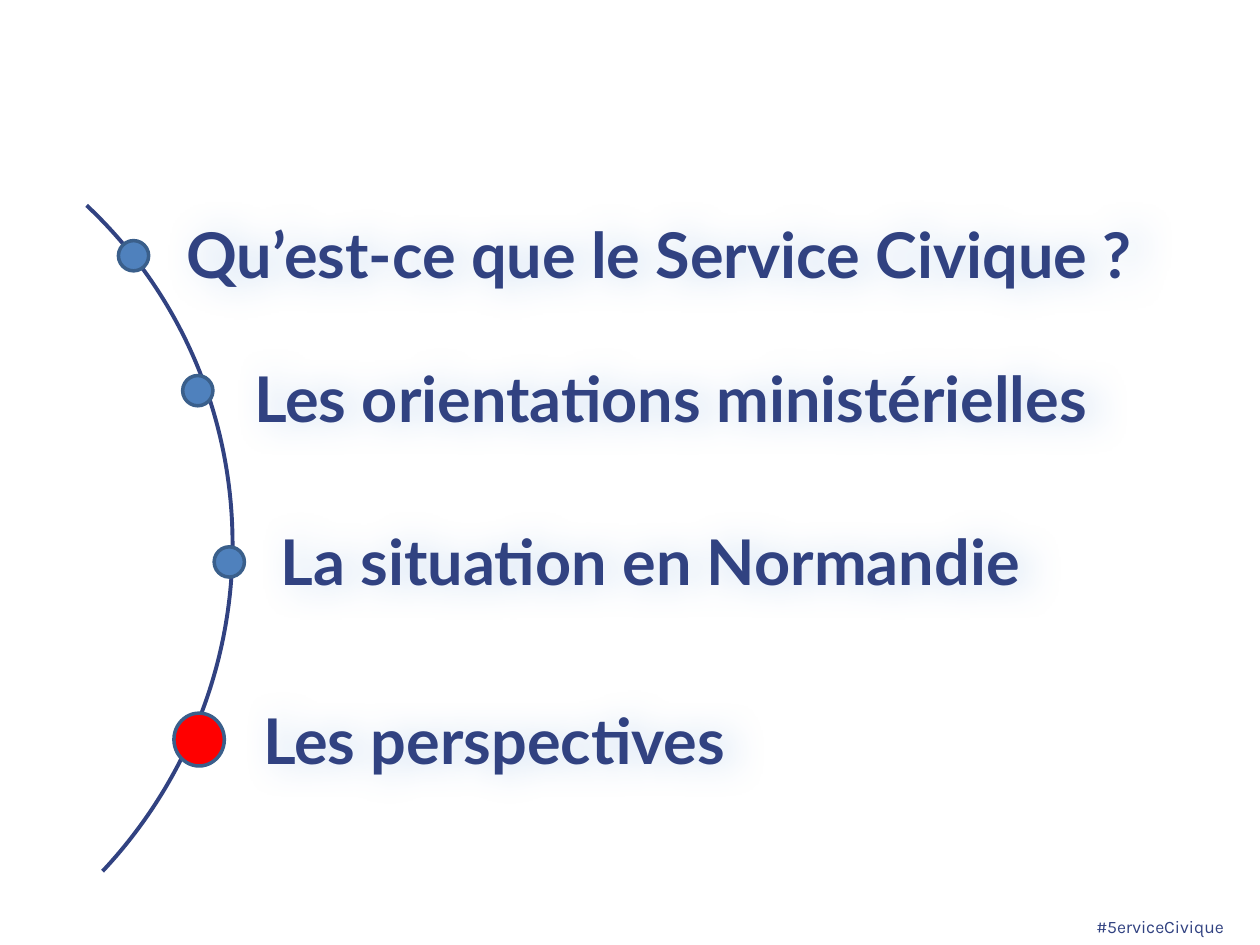
from dataclasses import dataclass

from lxml import etree
from pptx import Presentation
from pptx.dml.color import RGBColor
from pptx.enum import shapes, text
from pptx.oxml import ns
from pptx.util import Pt


@dataclass
class Theme:
    navy: str = "314281"
    blue: str = "4F81BD"
    edge: str = "3A5F8B"
    red: str = "FF0000"
    glow: str = "8EB4E3"
    head: str = "Lato"
    foot: str = "Karla"
    big: float = 36
    small: float = 10
    curve: float = 2.25
    ring: float = 2


class Deck:
    """Holds the theme and the slide being filled; lengths are in points."""

    def __init__(self, theme, wide, high):
        self.theme = theme
        self.file = Presentation()
        self.file.slide_width, self.file.slide_height = Pt(wide), Pt(high)
        self.slide = self.file.slides.add_slide(self.file.slide_layouts[6])

    def shape(self, kind, box, line, width):
        item = self.slide.shapes.add_shape(kind, *map(Pt, box))
        item.shadow.inherit = False
        item.line.color.rgb = RGBColor.from_string(line)
        item.line.width = Pt(width)
        return item

    def arc(self, box, turn):
        item = self.shape(shapes.MSO_SHAPE.ARC, box, self.theme.navy, self.theme.curve)
        item.fill.background()
        item.rotation = turn

    def dot(self, box, fill):
        item = self.shape(shapes.MSO_SHAPE.OVAL, box, self.theme.edge, self.theme.ring)
        item.fill.solid()
        item.fill.fore_color.rgb = RGBColor.from_string(fill)

    def label(self, box, words, align=text.PP_ALIGN.LEFT, **font):
        item = self.slide.shapes.add_textbox(*map(Pt, box))
        item.text_frame.word_wrap = True
        para = item.text_frame.paragraphs[0]
        para.alignment = align
        run = para.add_run()
        run.text = words
        run.font.color.rgb = RGBColor.from_string(self.theme.navy)
        for name, value in font.items():
            setattr(run.font, name, value)
        return item

    def glow(self, item):
        """Add a soft shadow, which falls from the text of an unfilled box."""
        item.fill.background()
        props = item.element.spPr
        effect = etree.SubElement(props, ns.qn("a:effectLst"))
        shade = etree.SubElement(effect, ns.qn("a:outerShdw"), blurRad=str(Pt(20)),
                                 dist=str(Pt(6)), dir="60000", rotWithShape="0")
        tint = etree.SubElement(shade, ns.qn("a:srgbClr"), val=self.theme.glow)
        etree.SubElement(tint, ns.qn("a:alpha"), val="45000")


def main():
    theme = Theme()
    deck = Deck(theme, 720, 540)
    deck.label((558.7, 519.8, 147.6, 19.4), "#5erviceCivique", text.PP_ALIGN.RIGHT,
               name=theme.foot, size=Pt(theme.small))
    deck.arc((-403.2, 43.9, 534.2, 542.2), 43.2)

    past = (17.3, 17.3, theme.blue)
    now = (28.8, 30.2, theme.red)
    topics = [
        ("Qu’est-ce que le Service Civique ?", (99.4, 119.5, 605.5), (67.7, 137.5), past),
        ("Les orientations ministérielles", (138.2, 201.6, 534.2), (104.4, 214.6), past),
        ("La situation en Normandie", (153.4, 295.2, 480.2), (122.4, 312.5), past),
        ("Les perspectives", (143.3, 397.4, 311.8), (99.4, 407.5), now),
    ]
    for words, place, spot, (wide, high, fill) in topics:
        deck.dot((*spot, wide, high), fill)
        item = deck.label((*place, 43.9), words, name=theme.head,
                          size=Pt(theme.big), bold=True)
        deck.glow(item)

    deck.file.save("out.pptx")


if __name__ == "__main__":
    main()
